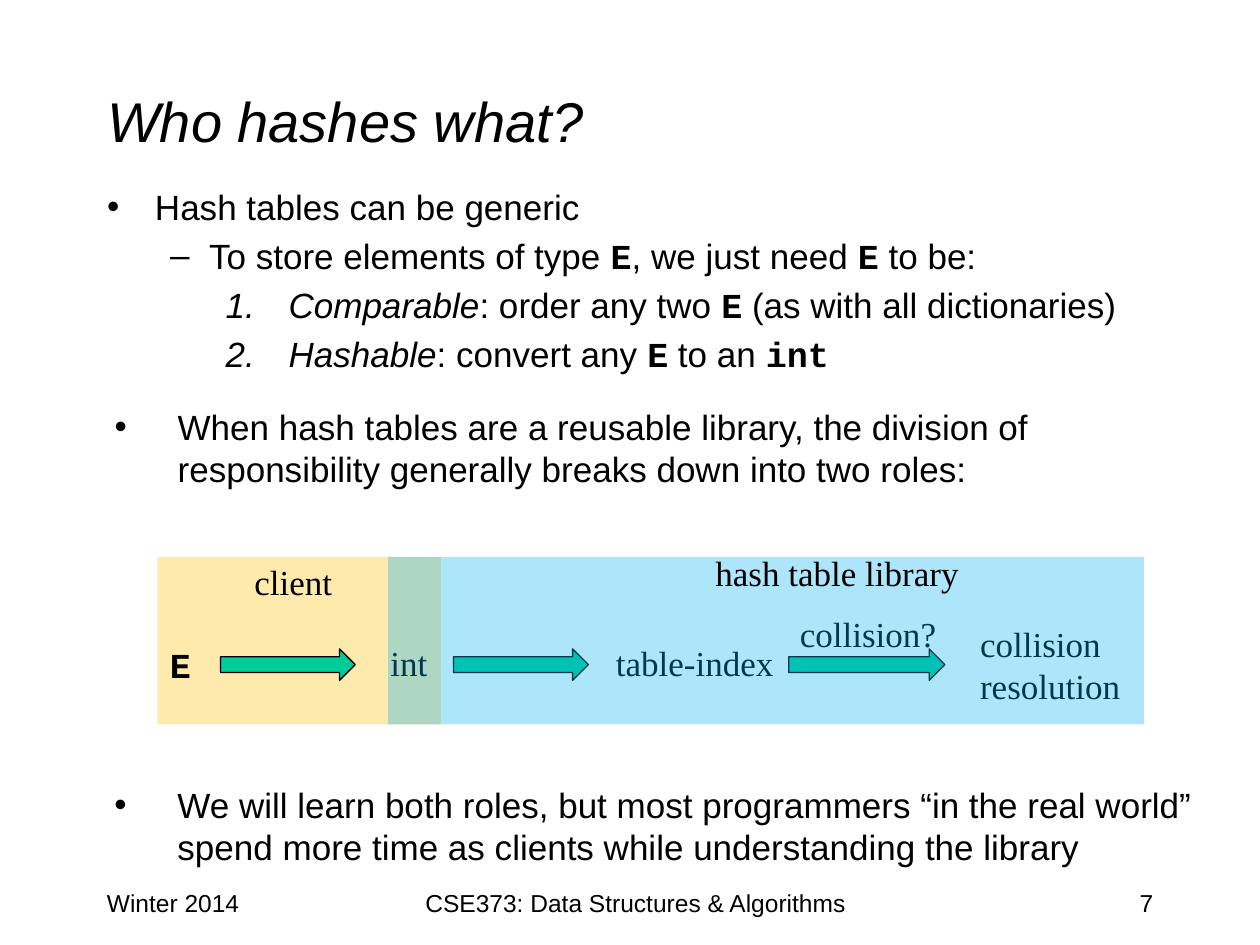
from lxml.etree import SubElement
from pptx import Presentation
from pptx.dml.color import RGBColor
from pptx.enum.shapes import MSO_SHAPE as Shape
from pptx.enum.text import MSO_ANCHOR as Anchor, MSO_AUTO_SIZE as AutoSize, PP_ALIGN as Align
from pptx.oxml.ns import qn
from pptx.util import Inches, Pt

COLORS = {"text": "000000", "client": "FFC000", "library": "00B0F0", "arrow": "00CC99"}
FORMATS = {
    "title": {"name": "Arial", "size": Pt(32), "italic": True},
    "body": {"name": "Arial", "size": Pt(20)},
    "term": {"name": "Arial", "size": Pt(20), "italic": True},
    "code": {"name": "Courier New", "size": Pt(20), "bold": True},
    "label": {"name": "Times New Roman", "size": Pt(20)},
    "footer": {"name": "Arial", "size": Pt(14)},
}
E = ("E", "code")


class SlideBuilder:
    def __init__(self, slide):
        self.slide = slide
        self.shapes = slide.shapes

    def color(self, name):
        return RGBColor.from_string(COLORS[name])

    def place(self, shape, box):
        for side, inches in zip(("left", "top", "width", "height"), box):
            setattr(shape, side, Inches(inches))

    def add_runs(self, paragraph, runs):
        """Add (text, format name) runs to a paragraph."""
        for text, style in runs:
            run = paragraph.add_run()
            run.text = text
            for key, value in FORMATS[style].items():
                setattr(run.font, key, value)
            run.font.color.rgb = self.color("text")

    def bullet(self, paragraph, mark, margin, hanging):
        """Set the bullet; the mark "1." stands for automatic numbering."""
        properties = paragraph._p.get_or_add_pPr()
        properties.set("marL", str(Inches(margin)))
        properties.set("indent", str(-Inches(hanging)))
        if mark == "1.":
            SubElement(properties, qn("a:buFont"), typeface="+mj-lt")
            SubElement(properties, qn("a:buAutoNum"), type="arabicPeriod")
        else:
            SubElement(properties, qn("a:buFont"), typeface="Arial")
            SubElement(properties, qn("a:buChar"), char=mark)

    def title(self, text, box):
        title = self.shapes.title
        self.place(title, box)
        frame = title.text_frame
        frame.auto_size = AutoSize.NONE
        frame.vertical_anchor = Anchor.MIDDLE
        frame.paragraphs[0].alignment = Align.LEFT
        self.add_runs(frame.paragraphs[0], [(text, "title")])

    def bullets(self, holder, box, items):
        """Fill a shape with (level, mark, margin, hanging, space before, runs) items."""
        self.place(holder, box)
        frame = holder.text_frame
        frame.word_wrap = True
        frame.auto_size = AutoSize.NONE
        for i, (level, mark, margin, hanging, before, runs) in enumerate(items):
            paragraph = frame.add_paragraph() if i else frame.paragraphs[0]
            paragraph.level = level
            paragraph.space_before = Pt(before)
            self.bullet(paragraph, mark, margin, hanging)
            self.add_runs(paragraph, runs)

    def text_box(self, box, lines, style, align=Align.LEFT, wrap=False):
        frame = self.shapes.add_textbox(*map(Inches, box)).text_frame
        frame.word_wrap = wrap
        for i, line in enumerate(lines):
            paragraph = frame.add_paragraph() if i else frame.paragraphs[0]
            paragraph.alignment = align
            self.add_runs(paragraph, [(line, style)])

    def block(self, kind, box, fill):
        shape = self.shapes.add_shape(kind, *map(Inches, box))
        shape.shadow.inherit = False
        shape.fill.solid()
        shape.fill.fore_color.rgb = self.color(fill)
        return shape

    def region(self, box, fill):
        """Draw a translucent area without an outline."""
        shape = self.block(Shape.RECTANGLE, box, fill)
        shape.line.fill.background()
        color = shape._element.spPr.find(qn("a:solidFill"))[0]
        SubElement(color, qn("a:alpha"), val="32000")

    def arrow(self, left, width):
        shape = self.block(Shape.RIGHT_ARROW, (left, 5.15, width, 0.25), "arrow")
        shape.line.color.rgb = self.color("text")
        shape.line.width = Pt(0.75)


def main():
    deck = Presentation()
    deck.slide_width, deck.slide_height = Inches(10), Inches(7.5)
    page = SlideBuilder(deck.slides.add_slide(deck.slide_layouts[1]))

    page.title("Who hashes what?", (0.75, 0.33, 8.5, 1.25))
    page.bullets(page.slide.placeholders[1], (0.75, 1.42, 8.92, 2.75), [
        (0, "•", 0.38, 0.38, 4, [("Hash tables can be generic", "body")]),
        (1, "–", 0.81, 0.31, 4, [("To store elements of type ", "body"), E,
                                 (", we just need ", "body"), E, (" to be:", "body")]),
        (2, "1.", 1.44, 0.5, 4, [("Comparable", "term"), (": order any two ", "body"), E,
                                 (" (as with all dictionaries)", "body")]),
        (2, "1.", 1.44, 0.5, 4, [("Hashable", "term"), (": convert any ", "body"), E,
                                 (" to an ", "body"), ("int", "code")]),
        (0, "•", 0.56, 0.5, 18, [("When hash tables are a reusable library, the division of "
                                  "responsibility generally breaks down into two roles:", "body")]),
    ])

    for left, width, text, align in (
        (0.75, 2.08, "Winter 2014", Align.LEFT),
        (7.17, 2.08, "7", Align.RIGHT),
        (3.17, 3.75, "CSE373: Data Structures & Algorithms", Align.CENTER),
    ):
        page.text_box((left, 7, width, 0.5), [text], "footer", align, wrap=True)

    closing_box = (0.75, 6.17, 8.92, 0.75)
    closing = page.shapes.add_textbox(*map(Inches, closing_box))
    page.bullets(closing, closing_box, [
        (0, "•", 0.56, 0.5, 4, [("We will learn both roles, but most programmers “in the real "
                                 "world” spend more time as clients while understanding the "
                                 "library", "body")]),
    ])

    # The library region overlaps the client region at "int" and tints what lies below it.
    page.region((1.25, 4.42, 2.25, 1.33), "client")
    for left, width in ((1.75, 1.07), (3.6, 1.07), (6.26, 1.24)):
        page.arrow(left, width)
    page.text_box((1.25, 5.06, 0.37, 0.44), ["E"], "code")
    for box, lines in (
        ((3, 5.04, 0.5, 0.44), ["int"]),
        ((4.79, 5.04, 1.46, 0.44), ["table-index"]),
        ((6.25, 4.81, 1.29, 0.44), ["collision?"]),
        ((7.68, 4.89, 1.32, 0.77), ["collision", "resolution"]),
        ((1.92, 4.4, 0.82, 0.44), ["client"]),
    ):
        page.text_box(box, lines, "label")
    page.region((3.08, 4.42, 6, 1.33), "library")
    page.text_box((5.58, 4.33, 2.14, 0.44), ["hash table library"], "label")

    deck.save("out.pptx")


if __name__ == "__main__":
    main()
